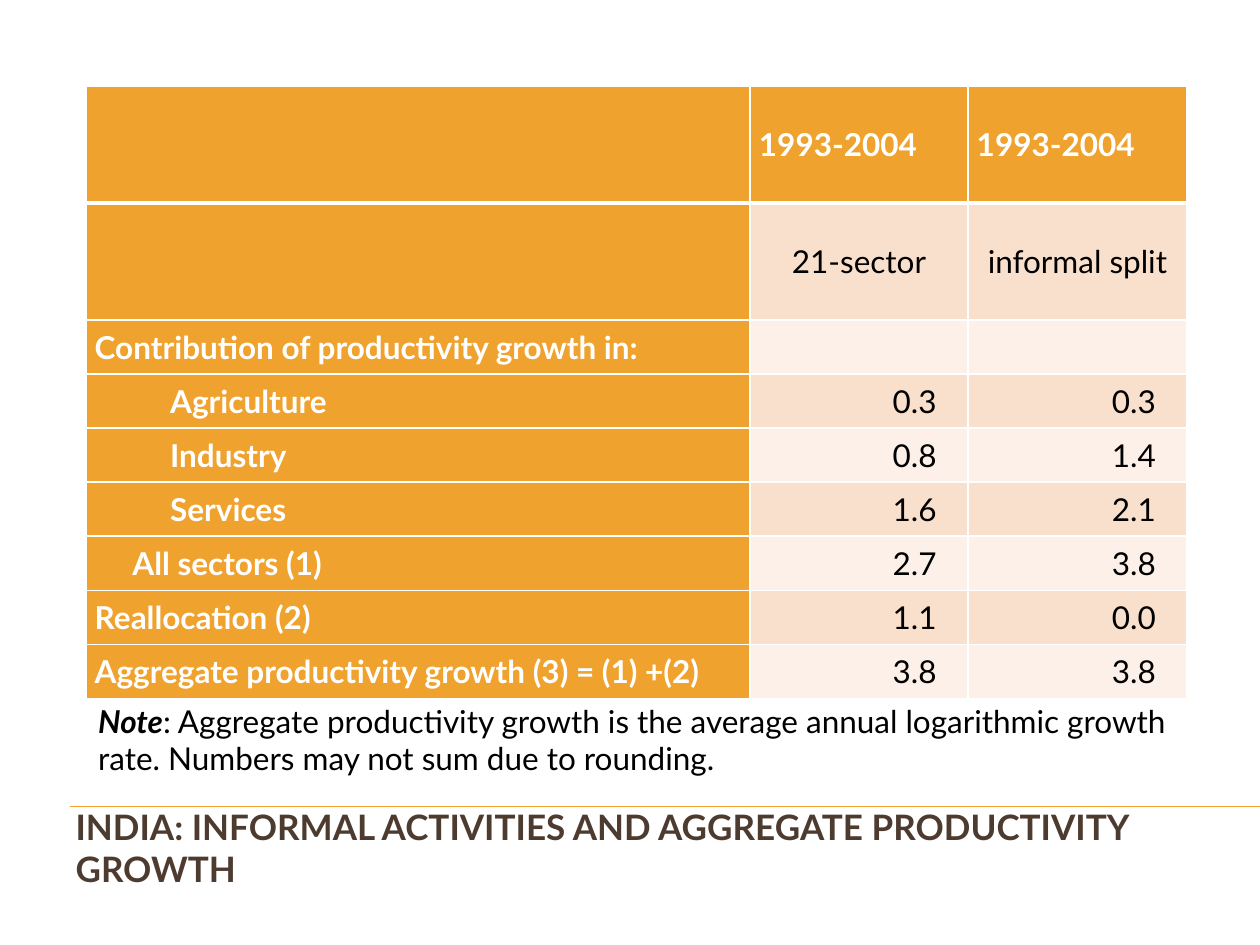
import pptx
import pptx.dml.color
import pptx.enum.shapes
import pptx.enum.text
import pptx.oxml
import pptx.oxml.ns
import pptx.util
from lxml import etree

Cm = pptx.util.Cm
Pt = pptx.util.Pt
RGBColor = pptx.dml.color.RGBColor
ALIGN = pptx.enum.text.PP_ALIGN
MIDDLE = pptx.enum.text.MSO_ANCHOR.MIDDLE

FONT = "Lato"
ORANGE = RGBColor(0xF0, 0xA2, 0x2E)
BROWN = RGBColor(0x4E, 0x3B, 0x30)
BLACK = RGBColor(0, 0, 0)
WHITE = RGBColor(0xFF, 0xFF, 0xFF)
BANDS = (RGBColor(0xF9, 0xE0, 0xCD), RGBColor(0xFC, 0xF0, 0xE8))

TITLE = "INDIA: INFORMAL ACTIVITIES AND AGGREGATE PRODUCTIVITY GROWTH"
NOTE_LABEL = "Note"
NOTE = (": Aggregate productivity growth is the average annual logarithmic "
        "growth rate. Numbers may not sum due to rounding.")

# Indent level, row label, 21-sector value, informal split value
ROWS = [
    (0, "", "1993-2004", "1993-2004"),
    (0, "", "21-sector", "informal split"),
    (0, "Contribution of productivity growth in:", "", ""),
    (2, "Agriculture", "0.3", "0.3"),
    (2, "Industry", "0.8", "1.4"),
    (2, "Services", "1.6", "2.1"),
    (1, "All sectors (1)", "2.7", "3.8"),
    (0, "Reallocation (2)", "1.1", "0.0"),
    (0, "Aggregate productivity growth (3) = (1) +(2)", "3.8", "3.8"),
]
COLUMN_WIDTHS = (13.39, 4.39, 4.42)
HEADER_ROWS = 2
HEADER_HEIGHT, BODY_HEIGHT = 2.36, 1.09
LEFT, TOP = 1.73, 1.73
CELL_INSET, VALUE_INSET, INDENT_STEP = 0.18, 0.63, 0.76


def add_run(paragraph, text, size, color, bold=False, italic=False):
    run = paragraph.add_run()
    run.text = text
    run.font.name = FONT
    run.font.size = Pt(size)
    run.font.color.rgb = color
    run.font.bold = bold
    run.font.italic = italic


def set_borders(cell, top_width, bottom_width):
    """White cell borders; the schema wants them ahead of the fill."""
    properties = cell._tc.get_or_add_tcPr()
    sides = (("L", 1), ("R", 1), ("T", top_width), ("B", bottom_width))
    for position, (side, width) in enumerate(sides):
        border = pptx.oxml.parse_xml(
            f'<a:ln{side} {pptx.oxml.ns.nsdecls("a")} w="{Pt(width)}">'
            f'<a:solidFill><a:srgbClr val="{WHITE}"/></a:solidFill></a:ln{side}>')
        properties.insert(position, border)


def fill_cell(cell, row, column, text, indent):
    is_header = row == 0 or column == 0
    is_value = row >= HEADER_ROWS and column > 0
    cell.fill.solid()
    cell.fill.fore_color.rgb = ORANGE if is_header else BANDS[(row - 1) % 2]
    set_borders(cell, 3 if row == 1 else 1, 3 if row == 0 else 1)
    cell.vertical_anchor = MIDDLE
    cell.margin_top = cell.margin_bottom = 0
    cell.margin_left = Cm(CELL_INSET + (indent * INDENT_STEP if column == 0 else 0))
    cell.margin_right = Cm(VALUE_INSET if is_value else CELL_INSET)
    paragraph = cell.text_frame.paragraphs[0]
    if is_value:
        paragraph.alignment = ALIGN.RIGHT
    else:
        paragraph.alignment = ALIGN.LEFT if is_header else ALIGN.CENTER
    if text:
        add_run(paragraph, text, 18, WHITE if is_header else BLACK, bold=is_header)


def add_growth_table(slide):
    heights = [HEADER_HEIGHT if row < HEADER_ROWS else BODY_HEIGHT
               for row in range(len(ROWS))]
    table = slide.shapes.add_table(
        len(ROWS), len(COLUMN_WIDTHS), Cm(LEFT), Cm(TOP),
        Cm(sum(COLUMN_WIDTHS)), Cm(sum(heights))).table
    for column, width in zip(table.columns, COLUMN_WIDTHS):
        column.width = Cm(width)
    for row, (height, (indent, *texts)) in enumerate(zip(heights, ROWS)):
        table.rows[row].height = Cm(height)
        for column, text in enumerate(texts):
            fill_cell(table.cell(row, column), row, column, text, indent)


def add_title_rule(slide):
    rule = slide.shapes.add_connector(
        pptx.enum.shapes.MSO_CONNECTOR.STRAIGHT,
        Cm(1.42), Cm(16.26), Cm(25.4), Cm(16.26))
    rule.line.color.rgb = ORANGE
    rule.line.width = Pt(0.75)
    etree.SubElement(rule._element.spPr, pptx.oxml.ns.qn("a:effectLst"))


def set_title(slide):
    title = slide.shapes.title
    title.left, title.top = Cm(1.27), Cm(16.36)
    title.width, title.height = Cm(23.5), Cm(1.45)
    frame = title.text_frame
    frame.word_wrap = True
    frame.auto_size = pptx.enum.text.MSO_AUTO_SIZE.NONE
    frame.vertical_anchor = MIDDLE
    frame.paragraphs[0].alignment = ALIGN.LEFT
    add_run(frame.paragraphs[0], TITLE, 20, BROWN, bold=True)


def add_note(slide):
    note = slide.shapes.add_textbox(
        Cm(LEFT), Cm(14.02), Cm(sum(COLUMN_WIDTHS)), Cm(1.8))
    note.text_frame.word_wrap = True
    paragraph = note.text_frame.paragraphs[0]
    add_run(paragraph, NOTE_LABEL, 18, BLACK, bold=True, italic=True)
    add_run(paragraph, NOTE, 18, BLACK)


def main():
    presentation = pptx.Presentation()
    presentation.slide_width, presentation.slide_height = Cm(25.4), Cm(19.05)
    slide = presentation.slides.add_slide(presentation.slide_layouts[5])
    add_title_rule(slide)
    set_title(slide)
    add_note(slide)
    add_growth_table(slide)
    presentation.save("out.pptx")


if __name__ == "__main__":
    main()
